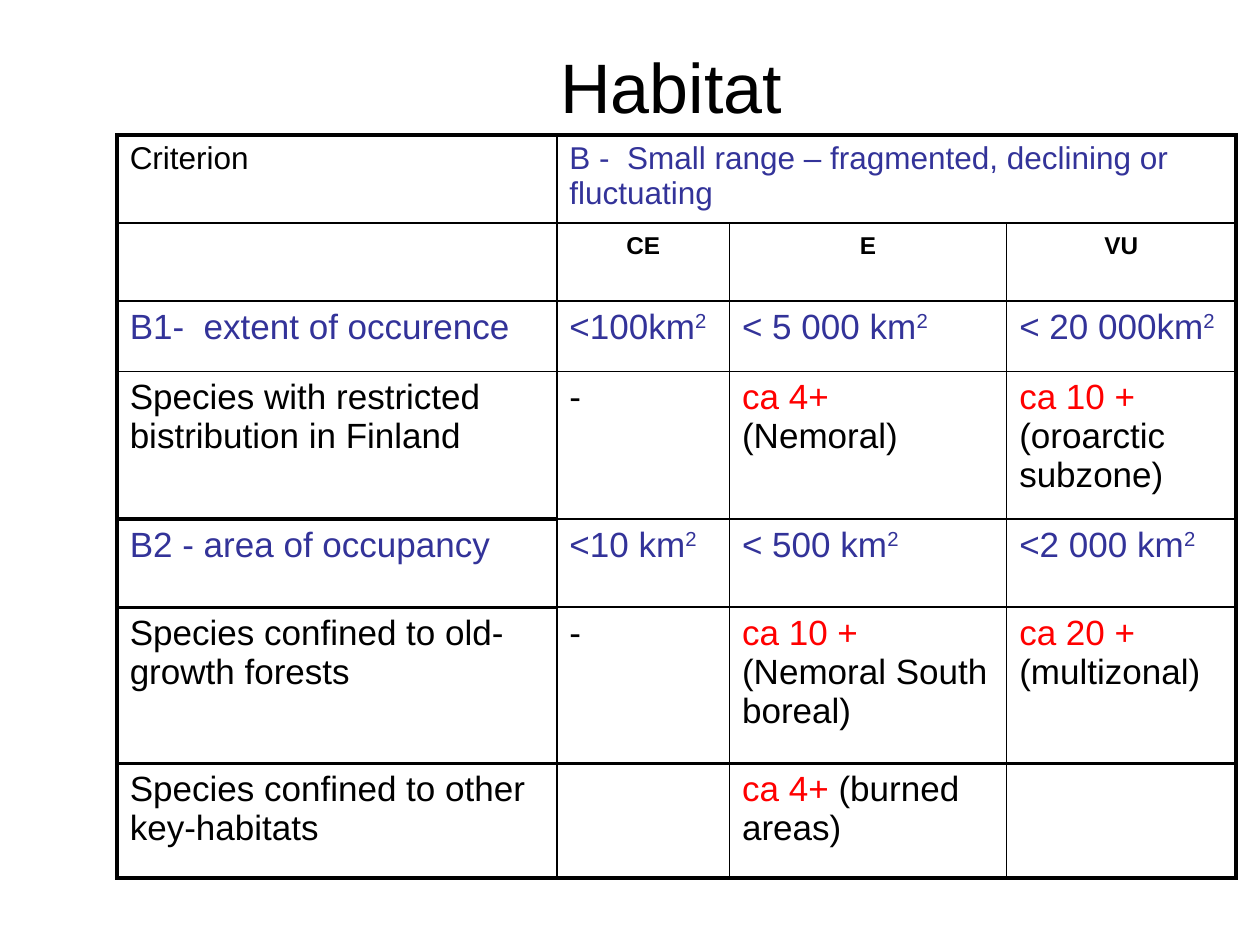
from lxml.etree import SubElement
from pptx import Presentation
from pptx.dml.color import RGBColor
from pptx.enum.text import MSO_ANCHOR, PP_ALIGN
from pptx.oxml.ns import qn
from pptx.util import Inches, Pt

BLACK, BLUE, RED = "000000", "333399", "FF0000"
THIN, THICK = 1, 2.25
RAISED = 30000  # superscript offset in thousandths of a percent

COLUMN_WIDTHS = [3.49, 1.37, 2.2, 1.82]
ROW_HEIGHTS = [0.7, 0.62, 0.56, 1.17, 0.7, 1.24, 0.91]


def color(hex_string):
    return RGBColor.from_string(hex_string)


def plain(text, hex_string=BLACK, size=20):
    return [dict(text=text, hex_string=hex_string, size=size)]


def category(text):
    return [dict(text=text, size=24, bold=True, raised=True)]


def area(text):
    """Blue threshold followed by a superscript 2."""
    return plain(text, BLUE) + [dict(text="2", hex_string=BLUE, raised=True)]


def count(number, zone):
    return plain(number, RED) + plain(zone)


ROWS = [
    [plain("Criterion", size=18),
     plain("B -  Small range – fragmented, declining or fluctuating", BLUE, 18), [], []],
    [[], category("CE"), category("E"), category("VU")],
    [plain("B1-  extent of occurence", BLUE),
     area("<100km"), area("< 5 000 km"), area("< 20 000km")],
    [plain("Species with restricted bistribution in Finland"), plain("-"),
     count("ca 4+", " (Nemoral)"), count("ca 10 +", " (oroarctic subzone)")],
    [plain("B2 - area of occupancy", BLUE),
     area("<10 km"), area("< 500 km"), area("<2 000 km")],
    [plain("Species confined to old-growth forests"), plain("-"),
     count("ca 10 + ", "(Nemoral South boreal)"), count("ca 20 +", " (multizonal)")],
    [plain("Species confined to other key-habitats"), [],
     count("ca 4+", " (burned areas)"), []],
]
CATEGORY_ROW = 1


def horizontal_width(line, column):
    """Width of the horizontal rule above row number `line`."""
    thick = line in (0, 6, 7) or (column == 0 and line in (4, 5))
    return THICK if thick else THIN


def vertical_width(line):
    """Width of the vertical rule left of column number `line`."""
    return THICK if line in (0, len(COLUMN_WIDTHS)) else THIN


class SlideBuilder:
    font_name = "Arial"

    def __init__(self, slide):
        self.slide = slide

    def add_run(self, paragraph, text, hex_string=BLACK, size=20, bold=False, raised=False):
        run = paragraph.add_run()
        run.text = text
        run.font.name = self.font_name
        run.font.size = Pt(size)
        run.font.bold = bold
        run.font.color.rgb = color(hex_string)
        if raised:
            run.font._element.set("baseline", str(RAISED))

    def title(self, text, left, top, width, height):
        shape = self.slide.shapes.title
        shape.left, shape.top = Inches(left), Inches(top)
        shape.width, shape.height = Inches(width), Inches(height)
        shape.text_frame.vertical_anchor = MSO_ANCHOR.MIDDLE
        paragraph = shape.text_frame.paragraphs[0]
        paragraph.alignment = PP_ALIGN.CENTER
        self.add_run(paragraph, text, size=40)

    def borders(self, cell, **widths):
        properties = cell._tc.get_or_add_tcPr()
        for tag, width in widths.items():
            line = SubElement(properties, qn(f"a:{tag}"), w=str(Pt(width)))
            fill = SubElement(line, qn("a:solidFill"))
            SubElement(fill, qn("a:srgbClr"), val=BLACK)

    def table(self, rows, left, top):
        frame = self.slide.shapes.add_table(
            len(ROW_HEIGHTS), len(COLUMN_WIDTHS), Inches(left), Inches(top),
            Inches(sum(COLUMN_WIDTHS)), Inches(sum(ROW_HEIGHTS)))
        table = frame.table
        table.first_row = table.horz_banding = False
        for column, width in zip(table.columns, COLUMN_WIDTHS):
            column.width = Inches(width)
        for row, height in zip(table.rows, ROW_HEIGHTS):
            row.height = Inches(height)
        table.cell(0, 1).merge(table.cell(0, 3))

        for row, contents in enumerate(rows):
            for column, runs in enumerate(contents):
                cell = table.cell(row, column)
                right = column + (cell.span_width if cell.is_merge_origin else 1)
                self.borders(cell,
                             lnL=vertical_width(column), lnR=vertical_width(right),
                             lnT=horizontal_width(row, column),
                             lnB=horizontal_width(row + 1, column))
                cell.fill.background()
                paragraph = cell.text_frame.paragraphs[0]
                if row == CATEGORY_ROW:
                    paragraph.alignment = PP_ALIGN.CENTER
                for run in runs:
                    self.add_run(paragraph, **run)


def main():
    presentation = Presentation()
    presentation.slide_width, presentation.slide_height = Inches(10), Inches(7.5)
    builder = SlideBuilder(presentation.slides.add_slide(presentation.slide_layouts[5]))
    builder.title("Habitat ", 1.15, 0.44, 8.51, 0.47)
    builder.table(ROWS, 0.93, 1.07)
    presentation.save("out.pptx")


if __name__ == "__main__":
    main()
